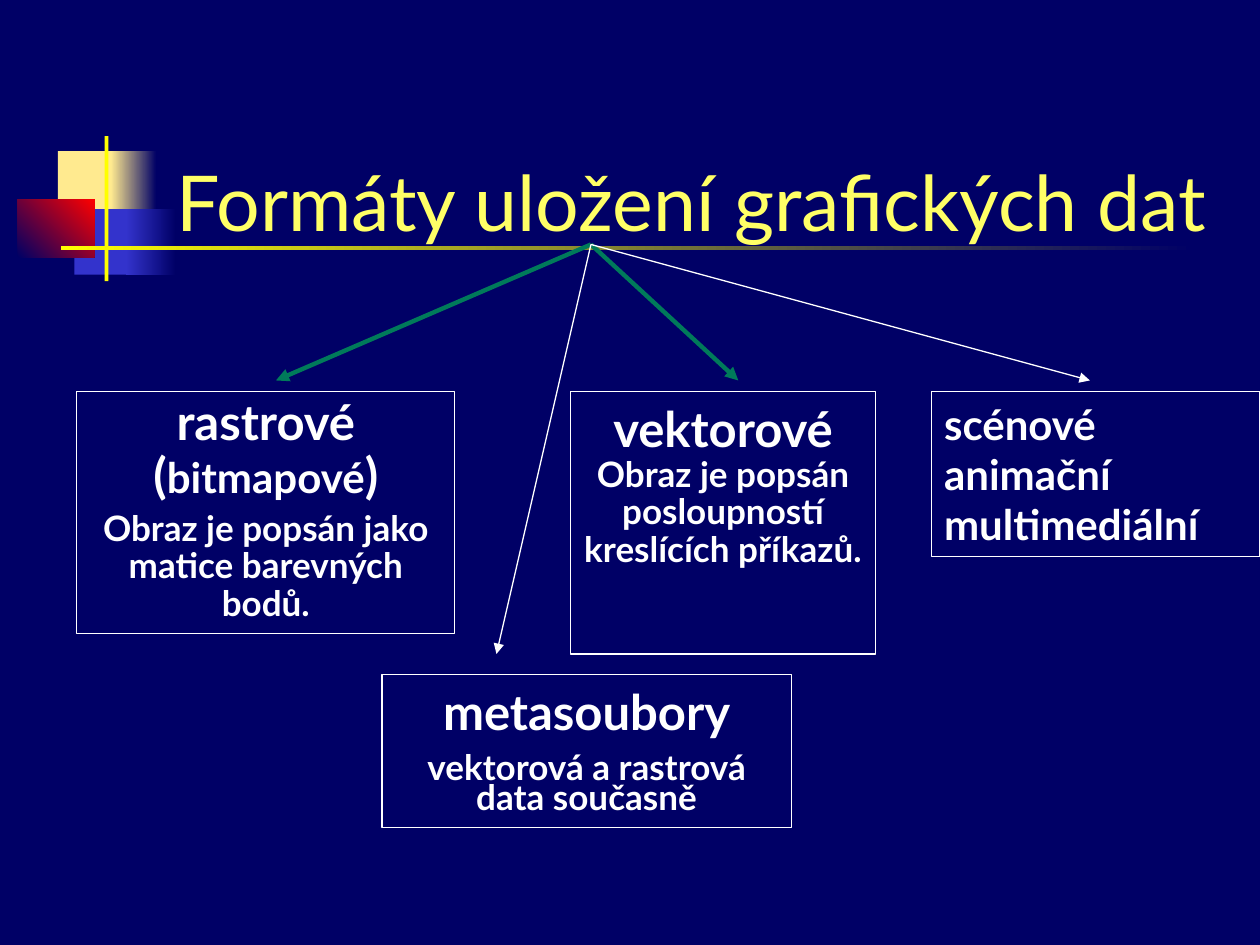
from lxml.etree import SubElement
from pptx import Presentation
from pptx.dml.color import RGBColor
from pptx.enum.shapes import MSO_CONNECTOR, MSO_SHAPE
from pptx.enum.text import MSO_ANCHOR, PP_ALIGN
from pptx.oxml.ns import qn
from pptx.util import Pt

FONT = "Lato"
NAVY = RGBColor(0x00, 0x00, 0x66)
CREAM = RGBColor(0xFF, 0xEA, 0x8F)
BLUE = RGBColor(0x33, 0x33, 0xCC)
RED = RGBColor(0xFF, 0x00, 0x00)
YELLOW = RGBColor(0xFF, 0xFF, 0x00)
TITLE_YELLOW = RGBColor(0xFF, 0xFF, 0x66)
GREEN = RGBColor(0x00, 0x7A, 0x5A)
WHITE = RGBColor(0xFF, 0xFF, 0xFF)

TITLE = "Formáty uložení grafických dat"

# (left, top, width, height), colours from start to end, gradient angle
DECORATIONS = [
    ((33.1, 86.4, 34.6, 37.4), [CREAM], 0),
    ((63.4, 86.4, 25.9, 37.4), [CREAM, NAVY], 0),
    ((42.5, 119.5, 33.1, 37.4), [BLUE], 0),
    ((72, 119.5, 28.8, 37.4), [BLUE, NAVY], 0),
    ((10.1, 113.8, 43.9, 33.1), [NAVY, RED], 45),
    ((59.8, 77.8, 2.2, 82.8), [YELLOW], 0),
    ((34.6, 140.4, 648, 2.4), [YELLOW, NAVY], 0),
]

ARROW_START = (337.7, 139.7)

# Each paragraph: runs of (text, size), then its format
FORMATS = [
    {
        "box": (43.9, 223.9, 216, 138.2),
        "paragraphs": [
            ([("rastrové", 28)], {"line_spacing": 0.9}),
            ([("(", 28), ("bitmapové", 24), (")", 28)], {"line_spacing": 0.9}),
            ([("Obraz je popsán jako matice barevných bodů.", 20)],
             {"line_spacing": 0.9, "space_before": 4}),
        ],
        "arrow": ((157.7, 217.4), GREEN, 2.5),
    },
    {
        "box": (326.2, 223.9, 174, 149.8),
        "paragraphs": [
            ([("vektorové", 28)], {}),
            ([("Obraz je popsán posloupností kreslících příkazů.", 20)],
             {"line_spacing": 0.9}),
        ],
        "arrow": ((421.9, 217.4), GREEN, 2.5),
    },
    {
        "box": (218.2, 385.6, 234, 87.1),
        "paragraphs": [
            ([("metasoubory", 28)], {}),
            ([("vektorová a rastrová data současně", 20)],
             {"line_spacing": 0.7, "space_before": 10}),
        ],
        "arrow": ((283.7, 373.7), WHITE, 0.75),
    },
    {
        "box": (532.4, 223.9, 187.6, 94.3),
        "paragraphs": [
            ([(word, 24)], {"align": PP_ALIGN.LEFT})
            for word in ("scénové", "animační", "multimediální")
        ],
        "arrow": ((622.8, 217.4), WHITE, 0.75),
    },
]


def write_paragraph(paragraph, runs, color=WHITE, bold=True, align=PP_ALIGN.CENTER,
                    line_spacing=1.0, space_before=0):
    paragraph.alignment = align
    paragraph.line_spacing = line_spacing
    paragraph.space_before = Pt(space_before)
    for text, size in runs:
        run = paragraph.add_run()
        run.text = text
        run.font.name = FONT
        run.font.size = Pt(size)
        run.font.bold = bold
        run.font.color.rgb = color


def add_rectangle(slide, bounds):
    shape = slide.shapes.add_shape(MSO_SHAPE.RECTANGLE, *map(Pt, bounds))
    shape.shadow.inherit = False
    return shape


def add_decoration(slide, bounds, colors, angle):
    shape = add_rectangle(slide, bounds)
    shape.line.fill.background()
    if len(colors) == 1:
        shape.fill.solid()
        shape.fill.fore_color.rgb = colors[0]
        return
    shape.fill.gradient()
    shape.fill.gradient_angle = angle
    for position, (stop, color) in enumerate(zip(shape.fill.gradient_stops, colors)):
        stop.color.rgb = color
        stop.position = position


def add_title(slide):
    title = slide.shapes.title
    title.left, title.top, title.width, title.height = map(Pt, (93.6, 54.7, 612, 90))
    title.text_frame.vertical_anchor = MSO_ANCHOR.BOTTOM
    write_paragraph(title.text_frame.paragraphs[0], [(TITLE, 44)],
                    color=TITLE_YELLOW, bold=False, align=PP_ALIGN.LEFT)
    # The title lies above the decorations
    title.element.getparent().append(title.element)


def add_box(slide, bounds, paragraphs):
    box = add_rectangle(slide, bounds)
    box.fill.background()
    box.line.color.rgb = WHITE
    box.line.width = Pt(0.75)
    frame = box.text_frame
    frame.word_wrap = True
    frame.vertical_anchor = MSO_ANCHOR.TOP
    for index, (runs, style) in enumerate(paragraphs):
        paragraph = frame.add_paragraph() if index else frame.paragraphs[0]
        write_paragraph(paragraph, runs, **style)


def add_arrow(slide, end, color, width):
    arrow = slide.shapes.add_connector(
        MSO_CONNECTOR.STRAIGHT, *map(Pt, ARROW_START + end))
    arrow.line.color.rgb = color
    arrow.line.width = Pt(width)
    SubElement(arrow.line._get_or_add_ln(), qn("a:tailEnd"), type="triangle")
    SubElement(arrow.element.spPr, qn("a:effectLst"))


def main():
    presentation = Presentation()
    presentation.slide_width, presentation.slide_height = Pt(720), Pt(540)
    slide = presentation.slides.add_slide(presentation.slide_layouts[5])
    slide.background.fill.solid()
    slide.background.fill.fore_color.rgb = NAVY
    for decoration in DECORATIONS:
        add_decoration(slide, *decoration)
    add_title(slide)
    for item in FORMATS:
        add_box(slide, item["box"], item["paragraphs"])
        add_arrow(slide, *item["arrow"])
    presentation.save("out.pptx")


if __name__ == "__main__":
    main()
